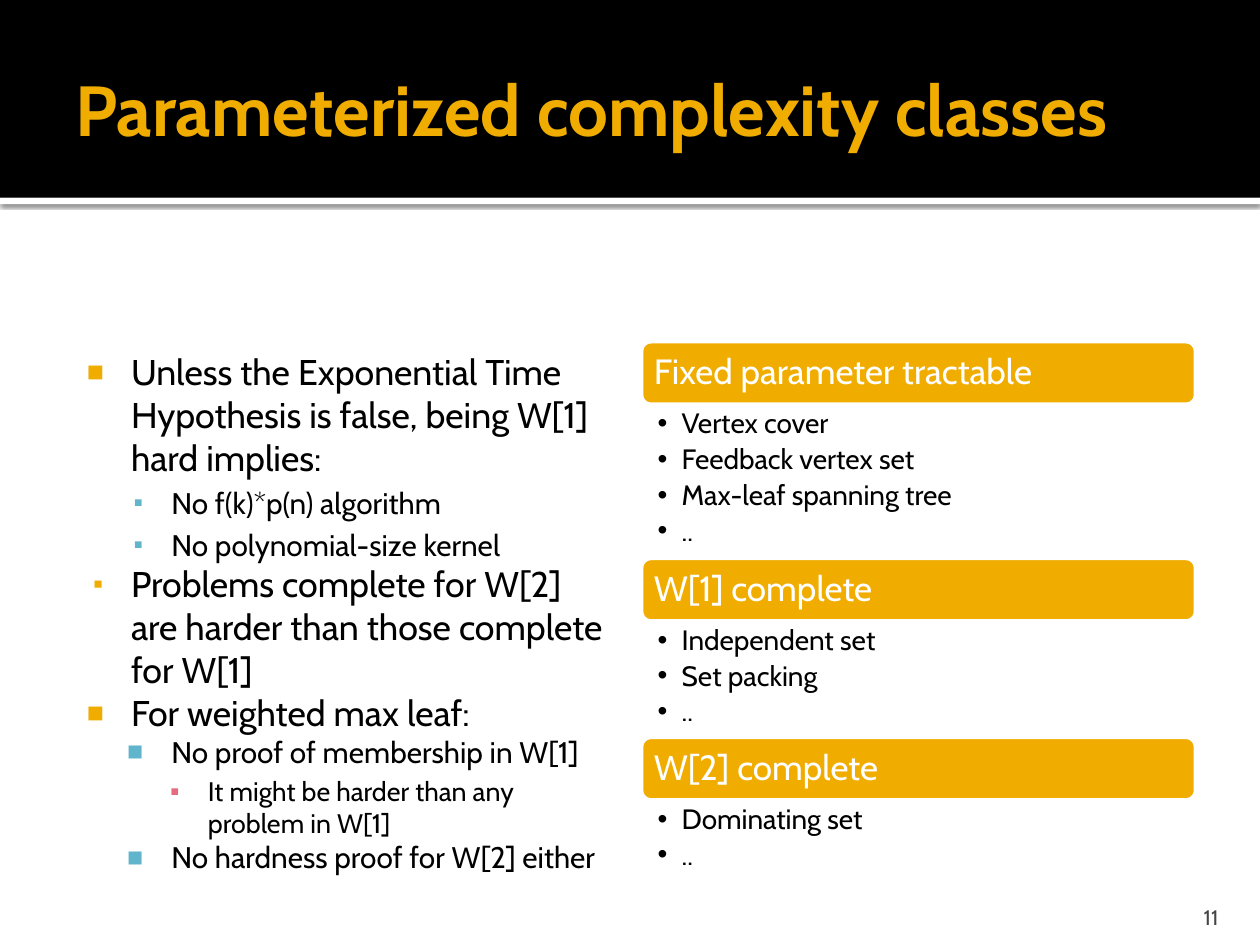
"""Build the slide on parameterized complexity classes."""
from lxml import etree
from pptx import Presentation, util as u
from pptx.dml.color import RGBColor
from pptx.enum import shapes, text
from pptx.oxml import parse_xml
from pptx.oxml.ns import nsdecls, qn

FONT = "Cabin"
GOLD, BLUE, PINK = "F0AD00", "60B5CC", "E66C7D"
WHITE, BLACK, GREY = "FFFFFF", "000000", "454545"

prs = Presentation()
prs.slide_width, prs.slide_height = u.Inches(10), u.Inches(7.5)
s = prs.slides.add_slide(prs.slide_layouts[6])


def add_box(kind, box, fill, line=None):
    sp = s.shapes.add_shape(kind, *[u.Inches(v) for v in box])
    sp.shadow.inherit = False
    sp.fill.solid()
    sp.fill.fore_color.rgb = RGBColor.from_string(fill)
    if line:
        sp.line.color.rgb = RGBColor.from_string(line)
        sp.line.width = u.Pt(3.78)
    else:
        sp.line.fill.background()
    return sp


def add_text(box, insets, paras, anchor=text.MSO_ANCHOR.TOP):
    tf = s.shapes.add_textbox(*[u.Inches(v) for v in box]).text_frame
    tf.word_wrap, tf.vertical_anchor = True, anchor
    for side, v in zip(("left", "top", "right", "bottom"), insets):
        setattr(tf, f"margin_{side}", u.Inches(v))
    for i, (words, size, color, fmt, bullet) in enumerate(paras):
        p = tf.add_paragraph() if i else tf.paragraphs[0]
        r = p.add_run()
        r.text = words
        r.font.name, r.font.size = FONT, u.Pt(size)
        r.font.color.rgb = RGBColor.from_string(color)
        for name, value in fmt.items():
            setattr(r.font if name == "bold" else p, name, value)
        if bullet:
            char, tint, pct, left, hang = bullet
            pPr = p._p.get_or_add_pPr()
            pPr.set("marL", str(u.Inches(left)))
            pPr.set("indent", str(-u.Inches(hang)))
            clr = etree.SubElement(pPr, qn("a:buClr"))
            etree.SubElement(clr, qn("a:srgbClr"), val=tint)
            etree.SubElement(pPr, qn("a:buSzPct"), val=str(pct * 1000))
            etree.SubElement(pPr, qn("a:buFont"), typeface="Arial")
            etree.SubElement(pPr, qn("a:buChar"), char=char)


strip = add_box(shapes.MSO_SHAPE.RECTANGLE, (0, 1.57, 10, 0.05), WHITE)
strip._element.spPr.remove(strip._element.spPr.find(qn("a:effectLst")))
strip._element.spPr.append(parse_xml(
    f'<a:effectLst {nsdecls("a")}><a:outerShdw blurRad="{u.Pt(2.5)}" dist="{u.Pt(0.8)}" '
    'dir="5400000"><a:srgbClr val="000000"><a:alpha val="60000"/></a:srgbClr>'
    '</a:outerShdw></a:effectLst>'))
add_box(shapes.MSO_SHAPE.RECTANGLE, (0, 0, 10, 1.57), BLACK)
add_text((0.5, 0.17, 9, 1.37), (0.1, 0.05, 0.05, 0.05),
         [("Parameterized complexity classes", 40.5, GOLD, {"bold": True}, None)],
         text.MSO_ANCHOR.MIDDLE)

# level: size, bullet colour, bullet percent, left indent
levels = [(20.4, GOLD, 80, 0.48), (17, BLUE, 90, 0.8), (15.3, PINK, 100, 1.09)]
points = [
    (0, "■", "Unless the Exponential Time Hypothesis is false, being W[1] hard implies:"),
    (1, "▪", "No f(k)*p(n) algorithm"),
    (1, "▪", "No polynomial-size kernel"),
    (0, "▪", "Problems complete for W[2] are harder than those complete for W[1]"),
    (0, "■", "For weighted max leaf:"),
    (1, "■", "No proof of membership in W[1]"),
    (2, "▪", "It might be harder than any problem in W[1]"),
    (1, "■", "No hardness proof for W[2] either"),
]
paras = []
for level, char, words in points:
    size, tint, pct, left = levels[level]
    before = 0.2 * size if level and char == "▪" else 0
    fmt = {"level": level, "space_before": u.Pt(before)}
    paras.append((words, size, BLACK, fmt,
                  (char, tint, pct, left, 0.35 if char == "■" else 0.3)))
add_text((0.5, 2.68, 4.42, 4.32), (0.06, 0.1, 0.1, 0.05), paras)

classes = {
    "Fixed parameter tractable": ["Vertex cover", "Feedback vertex set",
                                  "Max-leaf spanning tree", ".."],
    "W[1] complete": ["Independent set", "Set packing", ".."],
    "W[2] complete": ["Dominating set", ".."],
}
left, top, width, head, row = 5.08, 2.7, 4.42, 0.52, 0.3
for name, problems in classes.items():
    add_box(shapes.MSO_SHAPE.ROUNDED_RECTANGLE, (left, top, width, head), GOLD, WHITE)
    add_text((left + 0.03, top + 0.03, width - 0.05, head - 0.05), [0.08] * 4,
             [(name, 20, WHITE, {"line_spacing": 0.9}, None)], text.MSO_ANCHOR.MIDDLE)
    fmt = {"level": 1, "line_spacing": 0.9, "space_after": u.Pt(3.2)}
    add_text((left, top + head, width, row * len(problems)), (0.14, 0.03, 0.16, 0.03),
             [(item, 16, BLACK, fmt, ("•", BLACK, 100, 0.19, 0.19)) for item in problems])
    top += head + row * len(problems)

add_text((8.97, 7.08, 0.8, 0.3), (0.1, 0.05, 0.1, 0),
         [("11", 12, GREY, {"alignment": text.PP_ALIGN.RIGHT}, None)],
         text.MSO_ANCHOR.BOTTOM)

prs.save("out.pptx")
